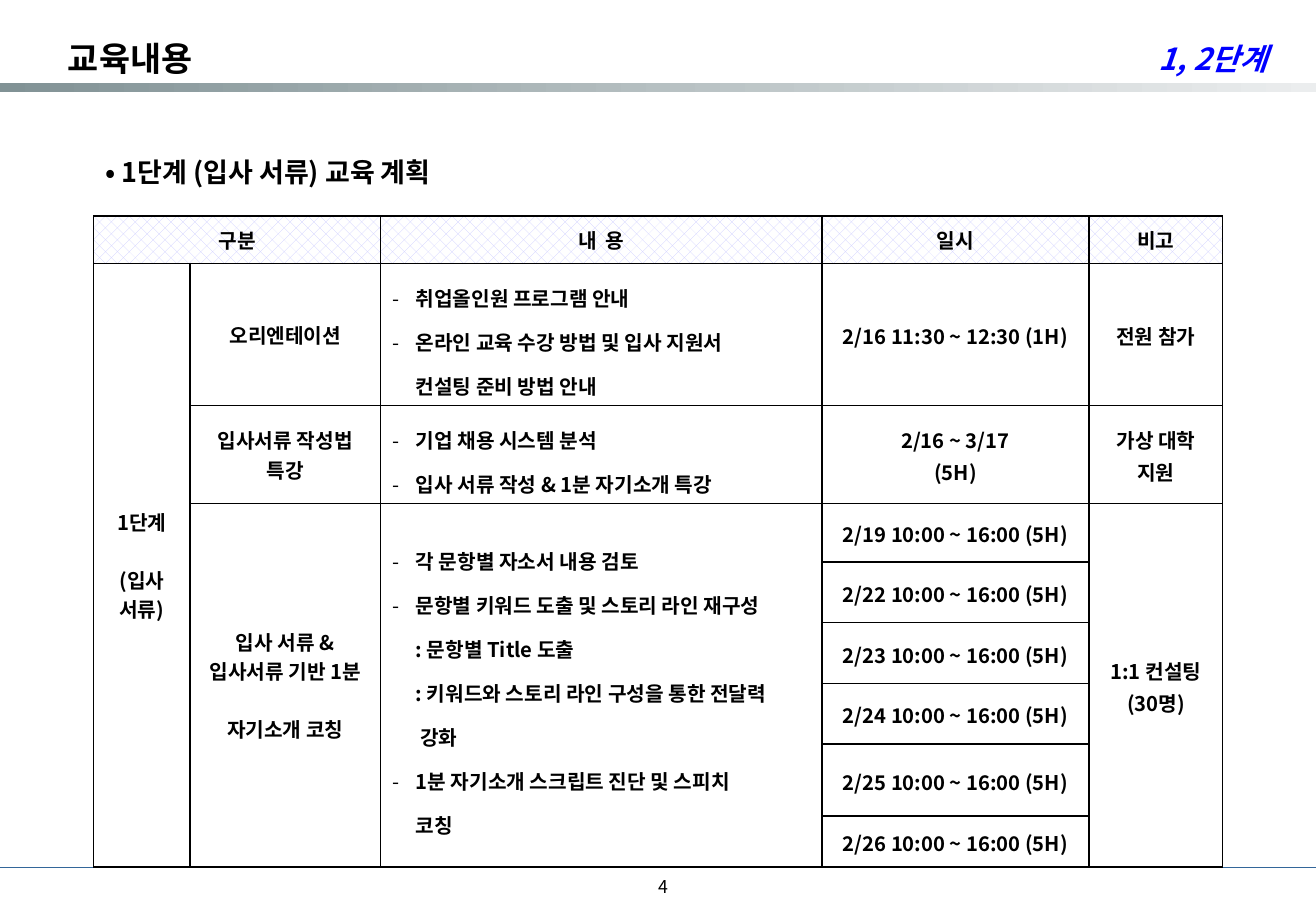
import dataclasses

import lxml.etree
import pptx
import pptx.dml.color
import pptx.enum.dml
import pptx.enum.shapes
import pptx.enum.text
import pptx.oxml
import pptx.oxml.ns
import pptx.util

Cm = pptx.util.Cm
Pt = pptx.util.Pt
Align = pptx.enum.text.PP_ALIGN
Anchor = pptx.enum.text.MSO_ANCHOR
qn = pptx.oxml.ns.qn


@dataclasses.dataclass(frozen=True)
class Theme:
    font: str = "Noto Sans CJK KR"
    black: str = "000000"
    white: str = "FFFFFF"
    blue: str = "0000FF"
    footer_line: str = "336699"
    bar_start: str = "819295"
    bar_end: str = "EBEDEE"
    header_pattern: str = "CCCCFF"
    title_size: float = 20
    tag_size: float = 18
    heading_size: float = 16
    table_size: float = 12
    number_size: float = 10.5


@dataclasses.dataclass(frozen=True)
class Box:
    left: float
    top: float
    width: float
    height: float

    def inner(self, left, top, width, height):
        return Box(self.left + left, self.top + top, width, height)

    def lengths(self):
        return Cm(self.left), Cm(self.top), Cm(self.width), Cm(self.height)


THEME = Theme()

COLUMN_WIDTHS = [2.01, 3.99, 9.22, 5.59, 2.79]
ROW_HEIGHTS = [0.99, 2.97, 2.05, 1.22, 1.27, 1.27, 1.27, 1.5, 1.07]
HEADERS = [(0, 2, "구분"), (2, 1, "내  용"), (3, 1, "일시"), (4, 1, "비고")]
GROUPS = [
    (1, 0, 8, ["1단계", "(입사\n서류)"]),
    (1, 1, 1, ["오리엔테이션"]),
    (2, 1, 1, ["입사서류 작성법 특강"]),
    (3, 1, 6, ["입사 서류 & 입사서류 기반 1분", "자기소개 코칭"]),
]
CONTENTS = [
    (1, 1, ["취업올인원 프로그램 안내",
            "온라인 교육 수강 방법 및 입사 지원서\n컨설팅 준비 방법 안내"]),
    (2, 1, ["기업 채용 시스템 분석", "입사 서류 작성 & 1분 자기소개 특강"]),
    (3, 6, ["각 문항별 자소서 내용 검토",
            "문항별 키워드 도출 및 스토리 라인 재구성\n: 문항별 Title 도출\n"
            ": 키워드와 스토리 라인 구성을 통한 전달력\n 강화",
            "1분 자기소개 스크립트 진단 및 스피치\n코칭"]),
]
COACHING_DAYS = [19, 22, 23, 24, 25, 26]
DATES = ["2/16 11:30 ~ 12:30 (1H)", "2/16 ~ 3/17\n(5H)"] + [
    f"2/{day} 10:00 ~ 16:00 (5H)" for day in COACHING_DAYS
]
REMARKS = [(1, 1, "전원 참가"), (2, 1, "가상 대학 지원"), (3, 6, "1:1 컨설팅\n(30명)")]


def rgb(value):
    return pptx.dml.color.RGBColor.from_string(value)


def write(paragraph, text, size, color=THEME.black, bold=True, italic=False):
    for index, line in enumerate(text.split("\n")):
        if index:
            paragraph.add_line_break()
        run = paragraph.add_run()
        run.text = line
        run.font.size = Pt(size)
        run.font.bold = bold
        run.font.italic = italic
        run.font.name = THEME.font
        run.font.color.rgb = rgb(color)
        east_asian = lxml.etree.SubElement(run.font._element, qn("a:ea"))
        east_asian.set("typeface", THEME.font)


def prepare_frame(shape, anchor, inset=None):
    frame = shape.text_frame
    frame.word_wrap = True
    frame.auto_size = pptx.enum.text.MSO_AUTO_SIZE.NONE
    frame.vertical_anchor = anchor
    if inset is not None:
        frame.margin_left = frame.margin_right = Cm(inset)
        frame.margin_top = frame.margin_bottom = Cm(inset)
    return frame.paragraphs[0]


def add_header(slide, box):
    bar = slide.shapes.add_shape(
        pptx.enum.shapes.MSO_SHAPE.RECTANGLE, *box.inner(0, 1.73, box.width, 0.2).lengths())
    bar.shadow.inherit = False
    bar.line.fill.background()
    bar.fill.gradient()
    bar.fill.gradient_angle = 0
    for stop, color in zip(bar.fill.gradient_stops, (THEME.bar_start, THEME.bar_end)):
        stop.color.rgb = rgb(color)

    title = slide.shapes.title
    title.left, title.top, title.width, title.height = box.inner(1.17, 0.58, 14.53, 1.19).lengths()
    tag = slide.shapes.add_textbox(*box.inner(17.75, 0.58, 8.99, 1.19).lengths())
    for shape, text, size, color, alignment, italic in (
        (title, "교육내용", THEME.title_size, THEME.black, Align.LEFT, False),
        (tag, "1, 2단계", THEME.tag_size, THEME.blue, Align.RIGHT, True),
    ):
        paragraph = prepare_frame(shape, Anchor.MIDDLE, 0.25)
        paragraph.alignment = alignment
        paragraph.line_spacing = 1.1
        write(paragraph, text, size, color, italic=italic)


def add_footer(slide, box):
    line_top = Cm(box.top + 0.11)
    line = slide.shapes.add_connector(
        pptx.enum.shapes.MSO_CONNECTOR.STRAIGHT,
        Cm(box.left), line_top, Cm(box.left + box.width), line_top)
    line.line.color.rgb = rgb(THEME.footer_line)
    line.line.width = Pt(0.75)
    lxml.etree.SubElement(line._element.spPr, qn("a:effectLst"))
    number = slide.shapes.add_textbox(*box.inner(7.8, 0, 6.43, box.height).lengths())
    paragraph = prepare_frame(number, Anchor.MIDDLE)
    paragraph.alignment = Align.RIGHT
    write(paragraph, "4", THEME.number_size, bold=False)


def add_heading(slide, box):
    heading = slide.shapes.add_textbox(*box.lengths())
    paragraph = prepare_frame(heading, Anchor.TOP)
    write(paragraph, "• 1단계 (입사 서류) 교육 계획", THEME.heading_size)


def add_borders(cell):
    properties = cell._tc.get_or_add_tcPr()
    for index, side in enumerate(("lnL", "lnR", "lnT", "lnB")):
        border = lxml.etree.Element(qn(f"a:{side}"), w=str(Pt(1)))
        fill = lxml.etree.SubElement(border, qn("a:solidFill"))
        lxml.etree.SubElement(fill, qn("a:srgbClr"), val=THEME.black)
        properties.insert(index, border)


def add_dash(paragraph):
    properties = paragraph._p.get_or_add_pPr()
    properties.set("marL", str(Cm(0.48)))
    properties.set("indent", str(-Cm(0.48)))
    lxml.etree.SubElement(properties, qn("a:buFont"), typeface=THEME.font)
    lxml.etree.SubElement(properties, qn("a:buChar"), char="-")


def fill_cell(cell, texts, spacing=1.0, gap=0, dashed=False):
    for index, text in enumerate(texts):
        frame = cell.text_frame
        paragraph = frame.add_paragraph() if index else frame.paragraphs[0]
        paragraph.alignment = Align.LEFT if dashed else Align.CENTER
        paragraph.line_spacing = spacing
        if index and gap:
            paragraph.space_before = Pt(gap)
        if dashed:
            add_dash(paragraph)
        write(paragraph, text, THEME.table_size)


def add_schedule(slide, box):
    table = slide.shapes.add_table(len(ROW_HEIGHTS), len(COLUMN_WIDTHS), *box.lengths()).table
    table.horz_banding = False
    for column, width in zip(table.columns, COLUMN_WIDTHS):
        column.width = Cm(width)
    for row, height in zip(table.rows, ROW_HEIGHTS):
        row.height = Cm(height)
        for cell in row.cells:
            cell.vertical_anchor = Anchor.MIDDLE
            cell.margin_left = cell.margin_right = Cm(0.25)
            cell.margin_top = cell.margin_bottom = Cm(0.1)
            cell.fill.solid()
            cell.fill.fore_color.rgb = rgb(THEME.white)
            add_borders(cell)

    def place(row, column, row_span, column_span, texts, **style):
        cell = table.cell(row, column)
        if row_span * column_span > 1:
            cell.merge(table.cell(row + row_span - 1, column + column_span - 1))
        fill_cell(cell, texts, **style)

    for cell in table.rows[0].cells:
        cell.fill.patterned()
        cell.fill.pattern = pptx.enum.dml.MSO_PATTERN.PERCENT_30
        cell.fill.fore_color.rgb = rgb(THEME.header_pattern)
        cell.fill.back_color.rgb = rgb(THEME.white)
    for column, span, text in HEADERS:
        place(0, column, 1, span, [text])
    for row, column, span, texts in GROUPS:
        place(row, column, span, 1, texts, gap=17)
    for row, span, texts in CONTENTS:
        place(row, 2, span, 1, texts, spacing=1.5, dashed=True)
    for row, text in enumerate(DATES, start=1):
        place(row, 3, 1, 1, [text], spacing=1.1)
    for row, span, text in REMARKS:
        place(row, 4, span, 1, [text], spacing=1.1)


def main():
    presentation = pptx.Presentation()
    presentation.slide_width = Cm(27.51)
    presentation.slide_height = Cm(19.05)
    slide = presentation.slides.add_slide(presentation.slide_layouts[5])
    add_header(slide, Box(0, 0, 27.51, 1.93))
    add_footer(slide, Box(0, 18.03, 27.51, 1.02))
    add_heading(slide, Box(1.96, 3.12, 8.61, 1.2))
    add_schedule(slide, Box(1.96, 4.52, sum(COLUMN_WIDTHS), sum(ROW_HEIGHTS)))
    presentation.save("out.pptx")


if __name__ == "__main__":
    main()
